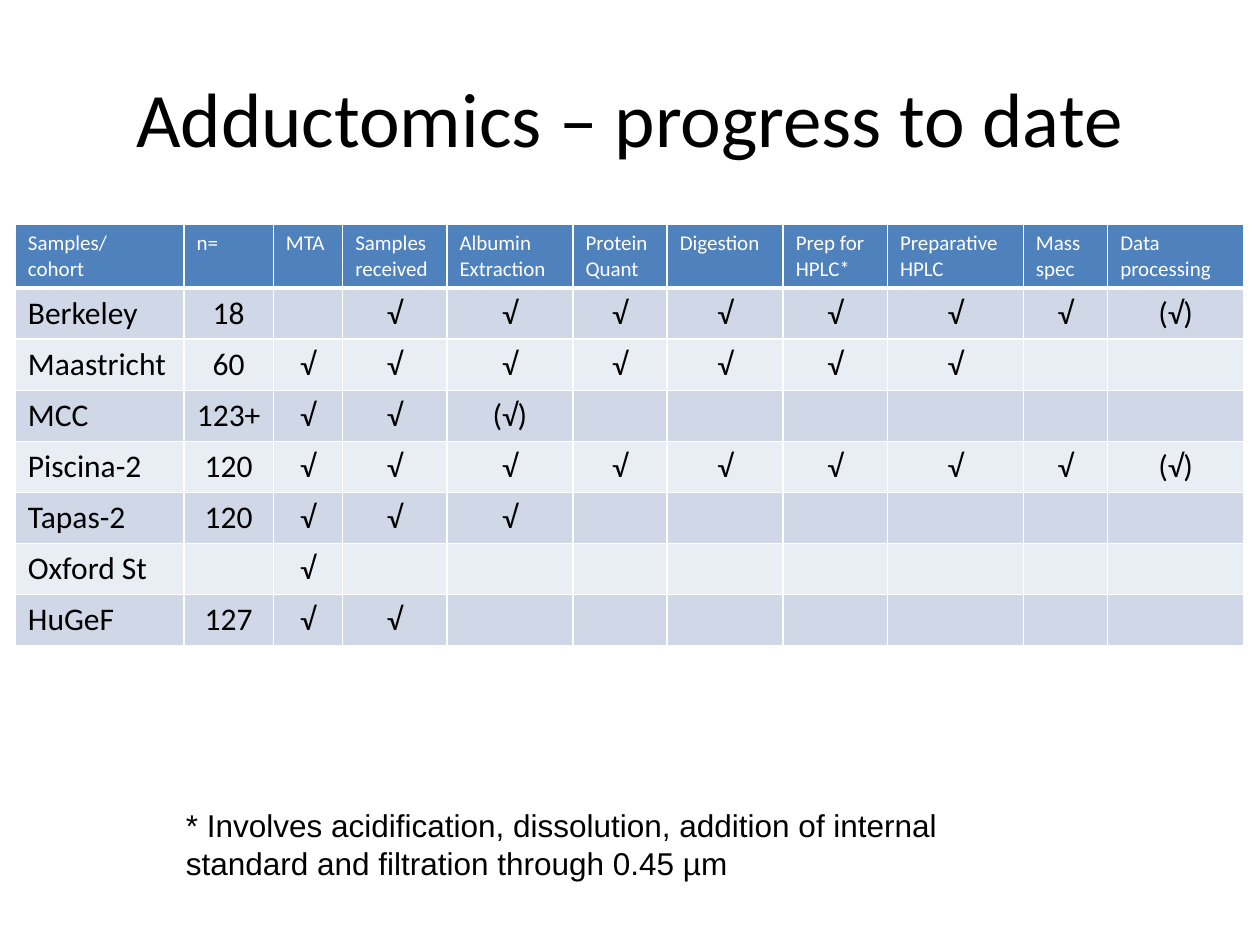
"""Build the Adductomics progress slide: a title, a status table and a footnote."""
from dataclasses import dataclass

from lxml.etree import SubElement as Sub
from pptx import Presentation
from pptx.dml.color import RGBColor
from pptx.enum.text import MSO_ANCHOR as Anchor, PP_ALIGN as Align
from pptx.oxml.ns import qn
from pptx.util import Cm, Pt

BLACK, WHITE, BLUE = "000000", "FFFFFF", "4F81BD"
BANDS = ("D0D8E8", "E9EDF4")
HEADS = ("Samples/\ncohort", "n=", "MTA", "Samples received", "Albumin Extraction",
         "Protein Quant", "Digestion", "Prep for HPLC*", "Preparative HPLC",
         "Mass spec", "Data processing")
WIDTHS = (3.4, 1.8, 1.4, 2.1, 2.54, 1.9, 2.34, 2.1, 2.74, 1.7, 2.74)
DONE, BEGUN = "√", "(√)"


@dataclass(frozen=True)
class Style:
    size: float
    color: str = BLACK
    font: str = "Calibri"
    align: Align = Align.LEFT


@dataclass(frozen=True)
class Box:
    left: float
    top: float
    width: float
    height: float
    text: str
    style: Style
    anchor: Anchor = Anchor.TOP


@dataclass(frozen=True)
class Cohort:
    name: str
    count: str
    first: int = 0
    done: int = 0
    begun: bool = False

    def cells(self) -> list[str]:
        marks = [""] * self.first + [DONE] * self.done + [BEGUN] * self.begun
        steps = len(HEADS) - 2
        return [self.name, self.count] + marks + [""] * (steps - len(marks))


HEAD = Style(12, WHITE)
NAME = Style(18)
MARK = Style(18, align=Align.CENTER)
BOXES = (
    Box(1.27, 0.76, 22.86, 3.18, "Adductomics – progress to date",
        Style(44, align=Align.CENTER), Anchor.MIDDLE),
    Box(3.5, 16.13, 18, 1.8, "* Involves acidification, dissolution, addition of "
        "internal standard and filtration through 0.45 µm", Style(18, font="Arial")),
)
COHORTS = (
    Cohort("Berkeley", "18", first=1, done=7, begun=True),
    Cohort("Maastricht", "60", done=7),
    Cohort("MCC", "123+", done=2, begun=True),
    Cohort("Piscina-2", "120", done=8, begun=True),
    Cohort("Tapas-2", "120", done=3),
    Cohort("Oxford St", "", done=1),
    Cohort("HuGeF", "127", done=2),
)


def paint(color, code: str) -> None:
    color.rgb = RGBColor.from_string(code)


def write(frame, text: str, style: Style) -> None:
    frame.text = text
    for para in frame.paragraphs:
        para.alignment = style.align
        for run in para.runs:
            run.font.size, run.font.name = Pt(style.size), style.font
            paint(run.font.color, style.color)


def draw_box(slide, box: Box) -> None:
    sides = (Cm(v) for v in (box.left, box.top, box.width, box.height))
    frame = slide.shapes.add_textbox(*sides).text_frame
    frame.word_wrap = True
    frame.vertical_anchor = box.anchor
    write(frame, box.text, box.style)


def edge(cell, base: float) -> None:
    props = cell._tc.get_or_add_tcPr()
    for side, width in (("L", 1), ("R", 1), ("T", 1), ("B", base)):
        line = Sub(props, qn(f"a:ln{side}"), w=str(Pt(width)))
        Sub(Sub(line, qn("a:solidFill")), qn("a:srgbClr"), val=WHITE)


def draw_cell(cell, text: str, style: Style, fill: str, base: float) -> None:
    edge(cell, base)
    cell.fill.solid()
    paint(cell.fill.fore_color, fill)
    if text:
        write(cell.text_frame, text, style)


def draw_table(slide) -> None:
    rows = [HEADS] + [cohort.cells() for cohort in COHORTS]
    high = [1.27] + [1.03] * len(COHORTS)
    table = slide.shapes.add_table(len(rows), len(HEADS), Cm(0.31), Cm(4.52),
                                   Cm(sum(WIDTHS)), Cm(sum(high))).table
    table.first_row = table.horz_banding = False
    for col, width in zip(table.columns, WIDTHS):
        col.width = Cm(width)
    for r, texts in enumerate(rows):
        table.rows[r].height = Cm(high[r])
        for c, text in enumerate(texts):
            if r == 0:
                look = HEAD, BLUE, 3
            else:
                look = MARK if c else NAME, BANDS[(r - 1) % 2], 1
            draw_cell(table.cell(r, c), text, *look)


def main() -> None:
    deck = Presentation()
    deck.slide_width, deck.slide_height = Cm(25.4), Cm(19.05)
    slide = deck.slides.add_slide(deck.slide_layouts[6])
    draw_table(slide)
    for box in BOXES:
        draw_box(slide, box)
    deck.save("out.pptx")


if __name__ == "__main__":
    main()
